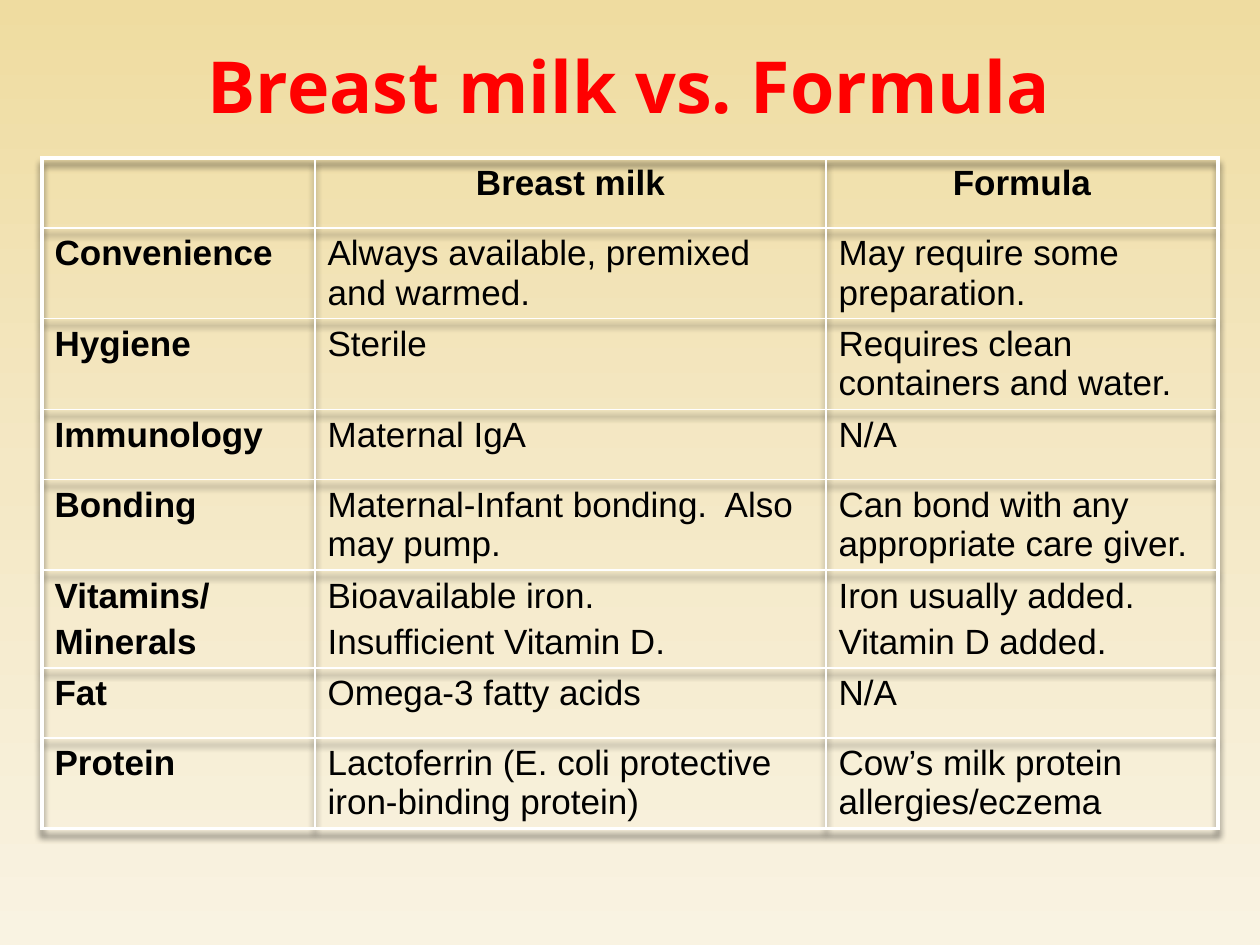
from copy import deepcopy
from dataclasses import dataclass

from lxml.etree import SubElement, fromstring
from pptx import Presentation
from pptx.dml.color import RGBColor as Color
from pptx.enum.text import MSO_ANCHOR as Anchor, MSO_AUTO_SIZE as AutoSize, PP_ALIGN as Align
from pptx.oxml.ns import qn
from pptx.util import Emu, Pt


@dataclass(frozen=True)
class Theme:
    background: tuple[str, ...] = ("EFDCA0", "F4E8C5", "F9F3E2")
    title: str = "FF0000"
    text: str = "000000"
    border: str = "FFFFFF"
    title_font: str = "Open Sans"
    body_font: str = "Arial"
    title_size: int = 41
    body_size: int = 20
    outer_border: float = 2.25
    inner_border: float = 1


@dataclass(frozen=True)
class Topic:
    name: str
    breast_milk: str
    formula: str


THEME = Theme()
COLUMNS = (273, 511, 392)
ROW_HEIGHT = 70
TOPICS = (
    Topic("", "Breast milk", "Formula"),
    Topic("Convenience", "Always available, premixed and warmed.", "May require some preparation."),
    Topic("Hygiene", "Sterile", "Requires clean containers and water."),
    Topic("Immunology", "Maternal IgA", "N/A"),
    Topic("Bonding", "Maternal-Infant bonding.  Also may pump.", "Can bond with any appropriate care giver."),
    Topic("Vitamins/\nMinerals", "Bioavailable iron.\nInsufficient Vitamin D.", "Iron usually added.\nVitamin D added."),
    Topic("Fat", "Omega-3 fatty acids", "N/A"),
    Topic("Protein", "Lactoferrin (E. coli protective iron-binding protein)", "Cow’s milk protein allergies/eczema"),
)
NO_STYLE = "{2D5ABB26-0587-4C30-8999-92F81FD0307C}"
SHADOW = (
    '<a:effectLst xmlns:a="http://schemas.openxmlformats.org/drawingml/2006/main">'
    '<a:outerShdw blurRad="50800" dist="50800" dir="5400000" algn="ctr" rotWithShape="0">'
    '<a:srgbClr val="000000"><a:alpha val="60000"/></a:srgbClr>'
    "</a:outerShdw></a:effectLst>"
)


def px(length: int) -> Emu:
    return Emu(round(length * 914400 / 126))


def style_font(paragraph, name: str, size: int, color: str, bold: bool) -> None:
    font = paragraph.font
    font.name, font.size, font.bold = name, Pt(size), bold
    font.color.rgb = Color.from_string(color)


def paint_background(page) -> None:
    fill = page.background.fill
    fill.gradient()
    fill.gradient_angle = 270
    stop_list = page._element.find(".//" + qn("a:gsLst"))
    stop_list.insert(1, deepcopy(stop_list[0]))
    last = len(THEME.background) - 1
    for index, (stop, color) in enumerate(zip(fill.gradient_stops, THEME.background)):
        stop.position = index / last
        stop.color.rgb = Color.from_string(color)


def add_title(page, text: str) -> None:
    title = page.shapes.title
    title.left, title.top, title.width, title.height = map(px, (94, 32, 1071, 105))
    frame = title.text_frame
    frame.text = text
    frame.vertical_anchor = Anchor.MIDDLE
    frame.auto_size = AutoSize.NONE
    paragraph = frame.paragraphs[0]
    paragraph.alignment = Align.CENTER
    style_font(paragraph, THEME.title_font, THEME.title_size, THEME.title, True)


def add_borders(cell, row: int, column: int) -> None:
    outer_sides = {
        "L": column == 0,
        "R": column == len(COLUMNS) - 1,
        "T": row == 0,
        "B": row == len(TOPICS) - 1,
    }
    properties = cell._tc.get_or_add_tcPr()
    for side, outer in outer_sides.items():
        width = THEME.outer_border if outer else THEME.inner_border
        line = SubElement(properties, qn(f"a:ln{side}"), w=str(Pt(width)))
        SubElement(SubElement(line, qn("a:solidFill")), qn("a:srgbClr"), val=THEME.border)


def space_before(paragraph, percent: int) -> None:
    spacing = SubElement(paragraph._p.get_or_add_pPr(), qn("a:spcBef"))
    SubElement(spacing, qn("a:spcPct"), val=str(percent * 1000))


def fill_cell(cell, text: str, row: int, column: int) -> None:
    add_borders(cell, row, column)
    cell.fill.background()
    cell.text_frame.text = text
    for paragraph in cell.text_frame.paragraphs:
        space_before(paragraph, 20)
        paragraph.alignment = Align.CENTER if row == 0 else Align.LEFT
        style_font(paragraph, THEME.body_font, THEME.body_size, THEME.text, row == 0 or column == 0)


def add_comparison(page) -> None:
    box = page.shapes.add_table(
        len(TOPICS), len(COLUMNS), px(42), px(158), px(sum(COLUMNS)), px(ROW_HEIGHT * len(TOPICS))
    )
    table = box.table
    table.first_row = table.horz_banding = False
    properties = table._tbl.tblPr
    properties.find(qn("a:tableStyleId")).text = NO_STYLE
    properties.insert(0, fromstring(SHADOW))
    for column, width in zip(table.columns, COLUMNS):
        column.width = px(width)
    for row, topic in enumerate(TOPICS):
        table.rows[row].height = px(ROW_HEIGHT)
        for column, text in enumerate((topic.name, topic.breast_milk, topic.formula)):
            fill_cell(table.cell(row, column), text, row, column)
    box.height = px(702)


def main() -> None:
    deck = Presentation()
    deck.slide_width, deck.slide_height = px(1260), px(945)
    page = deck.slides.add_slide(deck.slide_layouts[5])
    paint_background(page)
    add_title(page, "Breast milk vs. Formula")
    add_comparison(page)
    deck.save("out.pptx")


if __name__ == "__main__":
    main()
